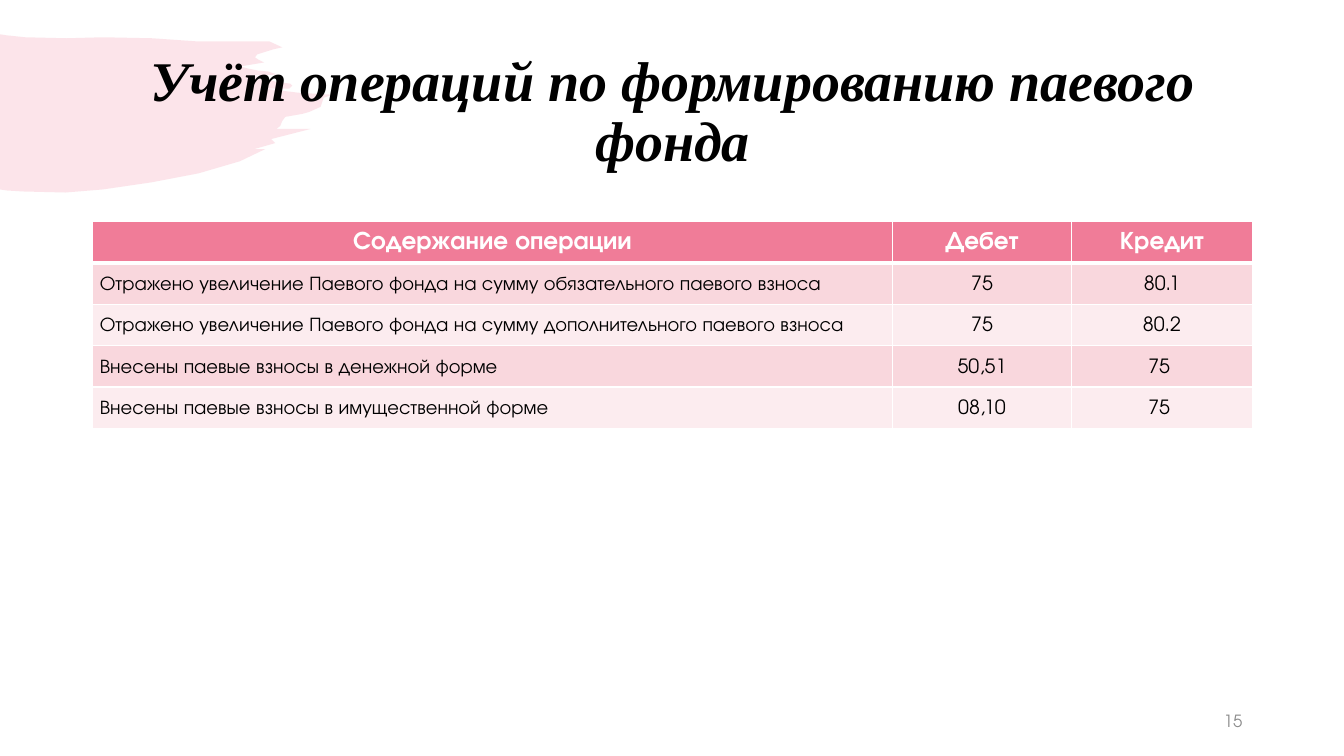
import dataclasses
import typing

import lxml.etree
import pptx
import pptx.dml.color
import pptx.enum.text
import pptx.oxml.ns
import pptx.util

PX = 9144
SANS = "TeX Gyre Adventor"
SERIF = "Times New Roman"
PINK = "F07C98"
BLACK = "000000"
WHITE = "FFFFFF"
BANDS = ("F9D7DD", "FCECEF")
ALIGN = pptx.enum.text.PP_ALIGN
MIDDLE = pptx.enum.text.MSO_ANCHOR.MIDDLE


@dataclasses.dataclass(frozen=True)
class Style:
    font: str
    size: int
    ink: str
    bold: bool = False
    slant: bool = False
    align: typing.Any = ALIGN.CENTER
    line: float = 1.0
    above: int = 0
    below: int = 0


@dataclasses.dataclass(frozen=True)
class Label:
    text: str
    left: int
    top: int
    width: int
    height: int
    style: Style


class Entry(typing.NamedTuple):
    deed: str
    debit: str
    credit: str


HEAD = Style(SANS, 18, WHITE, bold=True)
DEED = Style(SANS, 14, BLACK, align=ALIGN.LEFT, line=1.15, below=10)
CODE = Style(SANS, 14, BLACK, line=1.15, above=6, below=6)

LABELS = (
    Label("Учёт операций по формированию паевого фонда", 92, 40, 1150, 145,
          Style(SERIF, 40, BLACK, bold=True, slant=True, line=0.9)),
    Label("15", 942, 695, 300, 40, Style(SANS, 12, "8C8C8C", align=ALIGN.RIGHT)),
)

ENTRIES = (
    Entry("Содержание операции", "Дебет", "Кредит"),
    Entry("Отражено увеличение Паевого фонда на сумму обязательного паевого взноса", "75", "80.1"),
    Entry("Отражено увеличение Паевого фонда на сумму дополнительного паевого взноса", "75", "80.2"),
    Entry("Внесены паевые взносы в денежной форме", "50,51", "75 "),
    Entry("Внесены паевые взносы в имущественной форме", "08,10", "75 "),
)
WIDTHS = (793, 178, 179)
ROW = 41

BRUSH = (
    (0, 34), (6, 35), (25, 37), (66, 38), (102, 37), (151, 38), (194, 41),
    (248, 41), (267, 41), (280, 47), (271, 49), (255, 54), (253, 57), (256, 59),
    (262, 62), (238, 66), (246, 68), (256, 70), (266, 71), (275, 74), (251, 75),
    (263, 78), (273, 81), (280, 82), (288, 83), (290, 85), (287, 88), (284, 88),
    (263, 88), (296, 92), (330, 94), (321, 97), (318, 106), (307, 111), (300, 113),
    (283, 116), (280, 120), (278, 125), (274, 128), (308, 128), (269, 138),
    (273, 142), (252, 148), (263, 148), (238, 160), (197, 172), (150, 181),
    (102, 188), (65, 191), (23, 190), (7, 189), (0, 188),
)


def px(count: int) -> int:
    return pptx.util.Emu(count * PX)


def tint(code: str) -> pptx.dml.color.RGBColor:
    return pptx.dml.color.RGBColor.from_string(code)


def child(node: typing.Any, tag: str, **attrs: str) -> typing.Any:
    item = lxml.etree.SubElement(node, pptx.oxml.ns.qn(tag))
    for name, value in attrs.items():
        item.set(name, value)
    return item


def write(frame: typing.Any, text: str, style: Style) -> None:
    para = frame.paragraphs[0]
    para.alignment = style.align
    para.line_spacing = style.line
    para.space_before = pptx.util.Pt(style.above)
    para.space_after = pptx.util.Pt(style.below)
    run = para.add_run()
    run.text = text
    font = run.font
    font.name = style.font
    font.size = pptx.util.Pt(style.size)
    font.bold = style.bold
    font.italic = style.slant
    font.color.rgb = tint(style.ink)


def paint(slide: typing.Any) -> None:
    pen = slide.shapes.build_freeform(*BRUSH[0], scale=float(PX))
    pen.add_line_segments(BRUSH[1:], close=True)
    brush = pen.convert_to_shape()
    brush.shadow.inherit = False
    brush.line.fill.background()
    brush.fill.solid()
    brush.fill.fore_color.rgb = tint(PINK)
    tone = brush.fill._xPr.find(".//" + pptx.oxml.ns.qn("a:srgbClr"))
    child(tone, "a:alpha", val="20000")


def place(slide: typing.Any, label: Label) -> None:
    box = slide.shapes.add_textbox(
        px(label.left), px(label.top), px(label.width), px(label.height))
    frame = box.text_frame
    frame.word_wrap = True
    frame.vertical_anchor = MIDDLE
    write(frame, label.text, label.style)


def edge(cell: typing.Any, base: int) -> None:
    props = cell._tc.get_or_add_tcPr()
    for side, points in (("L", 1), ("R", 1), ("T", 1), ("B", base)):
        line = child(props, "a:ln" + side, w=str(pptx.util.Pt(points)))
        child(child(line, "a:solidFill"), "a:srgbClr", val=WHITE)


def tabulate(slide: typing.Any) -> None:
    frame = slide.shapes.add_table(
        len(ENTRIES), len(WIDTHS), px(92), px(220), px(sum(WIDTHS)), px(ROW * len(ENTRIES)))
    table = frame.table
    for col, width in zip(table.columns, WIDTHS):
        col.width = px(width)
    for r, entry in enumerate(ENTRIES):
        table.rows[r].height = px(ROW)
        for c, text in enumerate(entry):
            cell = table.cell(r, c)
            cell.vertical_anchor = MIDDLE
            cell.margin_left = cell.margin_right = px(7 if r else 10)
            cell.margin_top = cell.margin_bottom = px(0 if r else 5)
            edge(cell, 1 if r else 3)
            cell.fill.solid()
            cell.fill.fore_color.rgb = tint(BANDS[(r - 1) % 2] if r else PINK)
            body = CODE if c else DEED
            write(cell.text_frame, text, body if r else HEAD)


def main() -> None:
    deck = pptx.Presentation()
    deck.slide_width = px(1333)
    deck.slide_height = px(750)
    slide = deck.slides.add_slide(deck.slide_layouts[6])
    paint(slide)
    place(slide, LABELS[0])
    tabulate(slide)
    place(slide, LABELS[1])
    deck.save("out.pptx")


if __name__ == "__main__":
    main()
